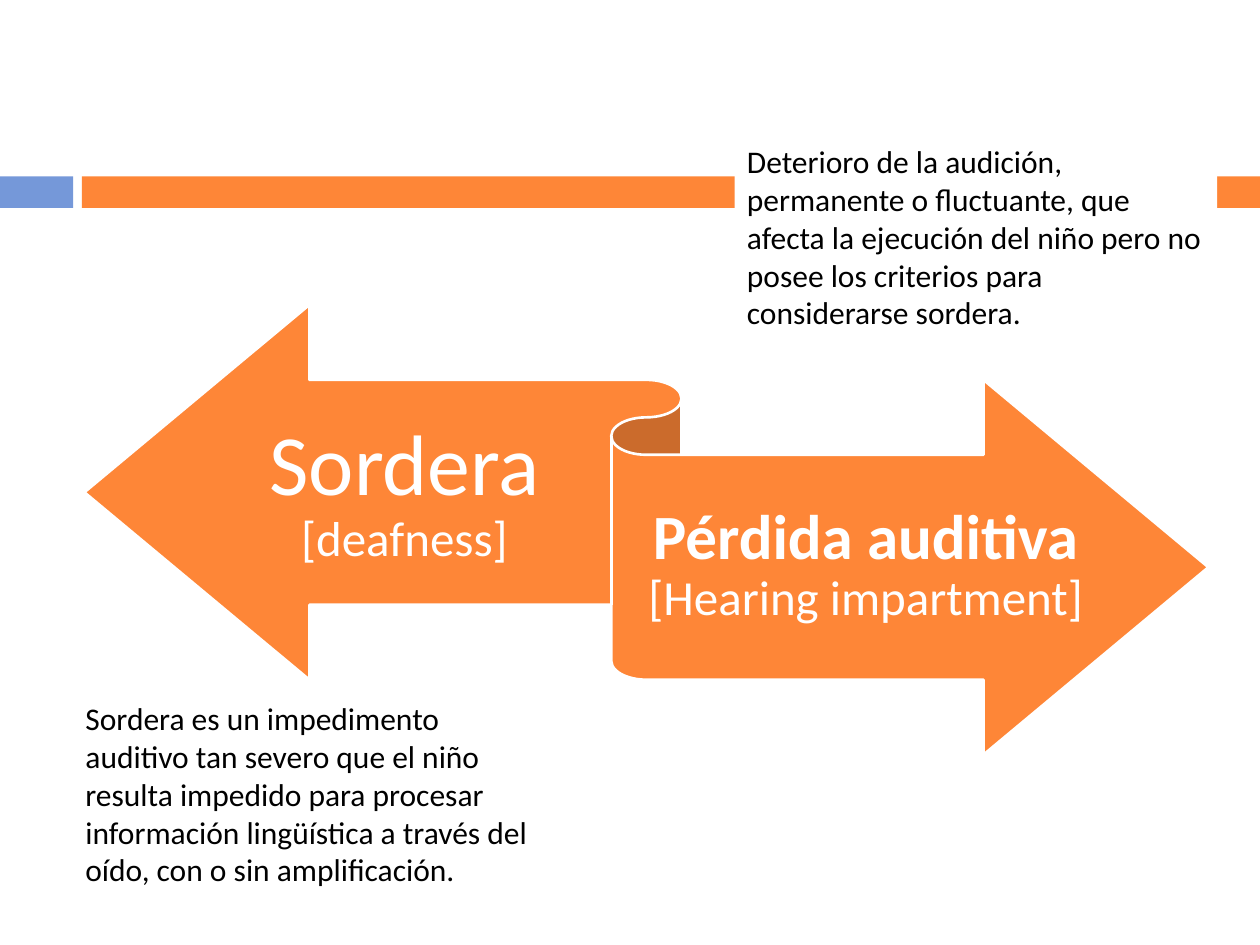
from dataclasses import dataclass

import pptx
import pptx.dml.color
import pptx.enum.shapes
import pptx.enum.text
import pptx.util

Inches, Pt = pptx.util.Inches, pptx.util.Pt
RGBColor = pptx.dml.color.RGBColor
MSO_SHAPE = pptx.enum.shapes.MSO_SHAPE
MSO_ANCHOR = pptx.enum.text.MSO_ANCHOR

ORANGE = RGBColor(0xFE, 0x86, 0x37)
BLUE = RGBColor(0x75, 0x98, 0xD9)
WHITE = RGBColor(0xFF, 0xFF, 0xFF)
BLACK = RGBColor(0x00, 0x00, 0x00)
FONT = "Calibri"


@dataclass
class Box:
    left: float
    top: float
    width: float
    height: float

    def lengths(self) -> list:
        return [Inches(v) for v in (self.left, self.top, self.width, self.height)]


@dataclass
class ArrowLabel:
    box: Box
    term: str
    size: int
    bold: bool
    english: str
    inset_top: float


@dataclass
class Definition:
    box: Box
    text: str


BARS = [(Box(0, 1.4, 0.58, 0.25), BLUE), (Box(0.65, 1.4, 9.35, 0.25), ORANGE)]
LABELS = [
    ArrowLabel(Box(1.74, 3.05, 2.94, 1.75), "Sordera ", 49, False,
               "[deafness]", 0.19),
    ArrowLabel(Box(5.13, 3.62, 3.48, 1.75), "Pérdida auditiva ", 36, True,
               "[Hearing impartment]", 0.14),
]
DEAFNESS = Definition(
    Box(0.58, 5.5, 3.83, 1.62),
    "Sordera es un impedimento auditivo tan severo que el niño resulta impedido "
    "para procesar información lingüística a través del oído, con o sin "
    "amplificación.")
HEARING_LOSS = Definition(
    Box(5.83, 1.08, 3.83, 1.62),
    "Deterioro de la audición, permanente o fluctuante, que afecta la ejecución "
    "del niño pero no posee los criterios para considerarse sordera.")


def add_filled(s, kind, box: Box, color: RGBColor):
    sp = s.shapes.add_shape(kind, *box.lengths())
    sp.shadow.inherit = False
    sp.fill.solid()
    sp.fill.fore_color.rgb = color
    sp.line.fill.background()
    return sp


def format_run(r, size: float, color: RGBColor, bold: bool = False) -> None:
    r.font.name = FONT
    r.font.size = Pt(size)
    r.font.bold = bold
    r.font.color.rgb = color


def add_label(s, label: ArrowLabel) -> None:
    tf = s.shapes.add_textbox(*label.box.lengths()).text_frame
    tf.word_wrap = True
    tf.vertical_anchor = MSO_ANCHOR.MIDDLE
    tf.margin_left = tf.margin_right = 0
    tf.margin_top = Inches(label.inset_top)
    tf.margin_bottom = Inches(label.inset_top + 0.01)
    p = tf.paragraphs[0]
    p.alignment = pptx.enum.text.PP_ALIGN.CENTER
    p.line_spacing = 0.9
    for text, size, bold in ((label.term, label.size, label.bold),
                             (label.english, 28, False)):
        r = p.add_run()
        r.text = text
        format_run(r, size, WHITE, bold)


def write_definition(sp, text: str) -> None:
    tf = sp.text_frame
    tf.word_wrap = True
    tf.auto_size = pptx.enum.text.MSO_AUTO_SIZE.SHAPE_TO_FIT_TEXT
    tf.vertical_anchor = MSO_ANCHOR.TOP
    tf.text = text
    p = tf.paragraphs[0]
    p.alignment = pptx.enum.text.PP_ALIGN.LEFT
    format_run(p.runs[0], 18, BLACK)


def main() -> None:
    prs = pptx.Presentation()
    prs.slide_width, prs.slide_height = Inches(10), Inches(7.5)
    s = prs.slides.add_slide(prs.slide_layouts[6])

    # Header bars
    for box, color in BARS:
        add_filled(s, MSO_SHAPE.RECTANGLE, box, color)

    # Two-way ribbon with its labels
    ribbon = add_filled(s, MSO_SHAPE.LEFT_RIGHT_RIBBON,
                        Box(0.67, 2.42, 8.92, 3.57), ORANGE)
    ribbon.line.color.rgb = WHITE
    ribbon.line.width = Pt(1.5)
    for label in LABELS:
        add_label(s, label)

    # Definitions; the upper one covers the header bar
    write_definition(s.shapes.add_textbox(*DEAFNESS.box.lengths()), DEAFNESS.text)
    write_definition(add_filled(s, MSO_SHAPE.RECTANGLE, HEARING_LOSS.box, WHITE),
                     HEARING_LOSS.text)

    prs.save("out.pptx")


if __name__ == "__main__":
    main()
